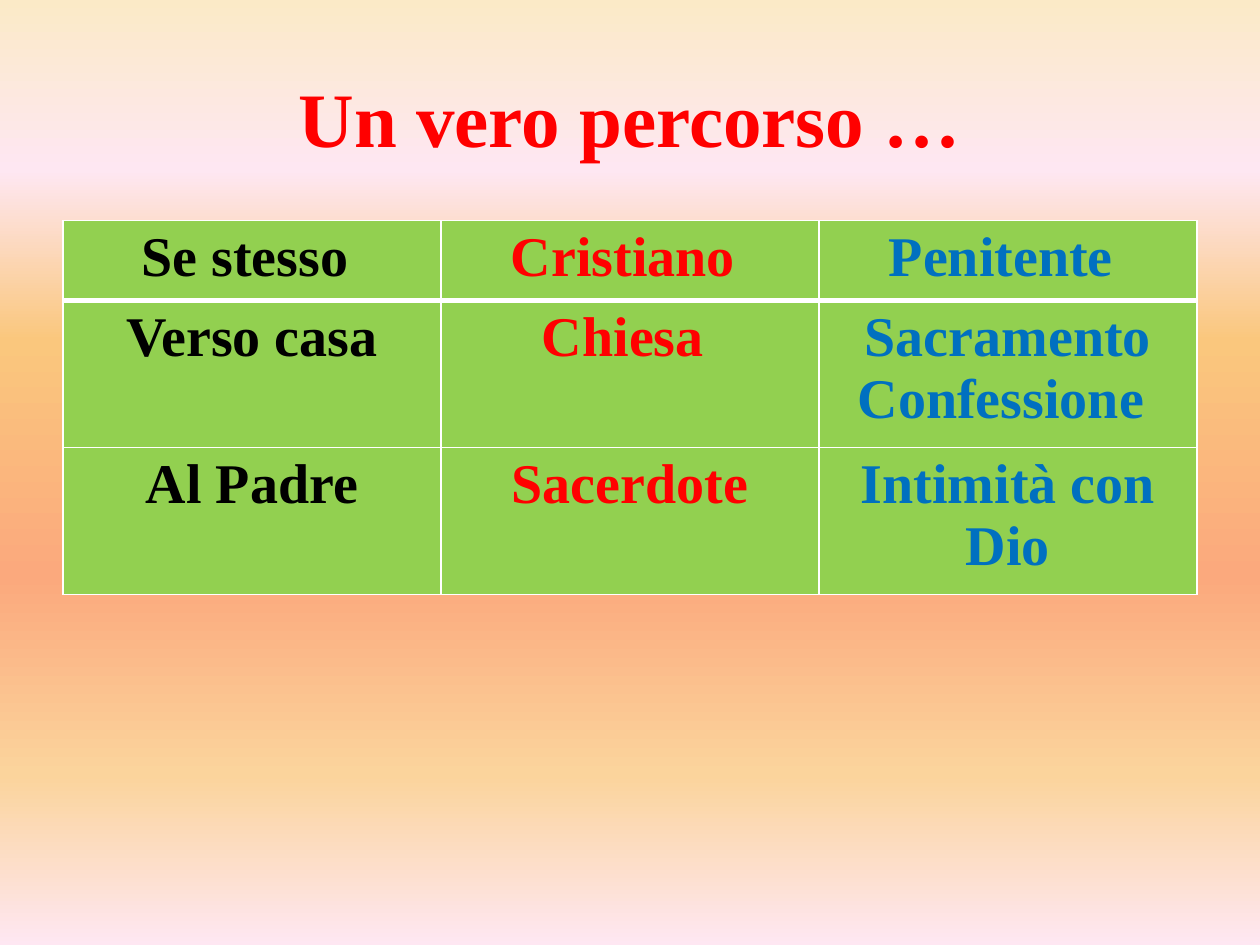
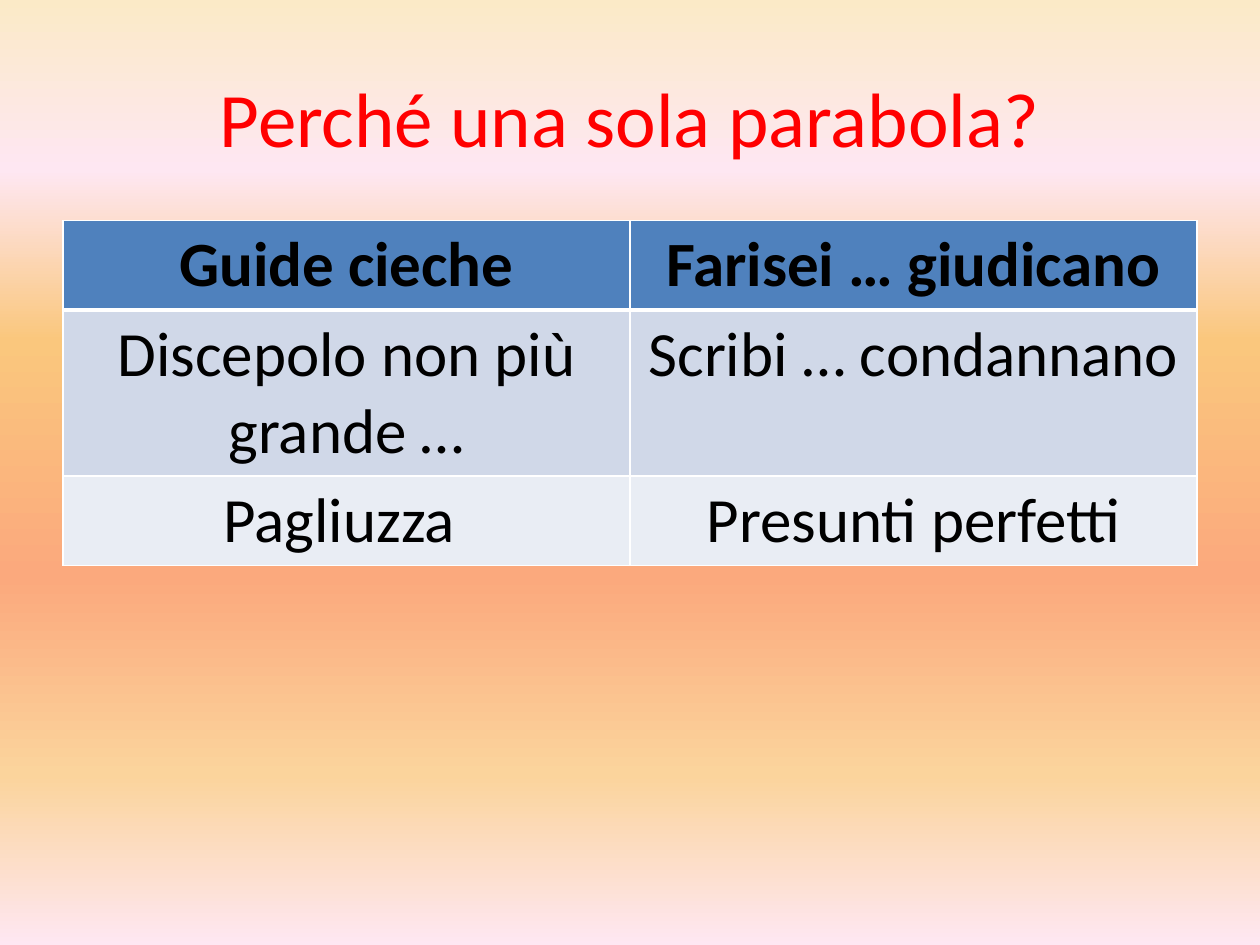
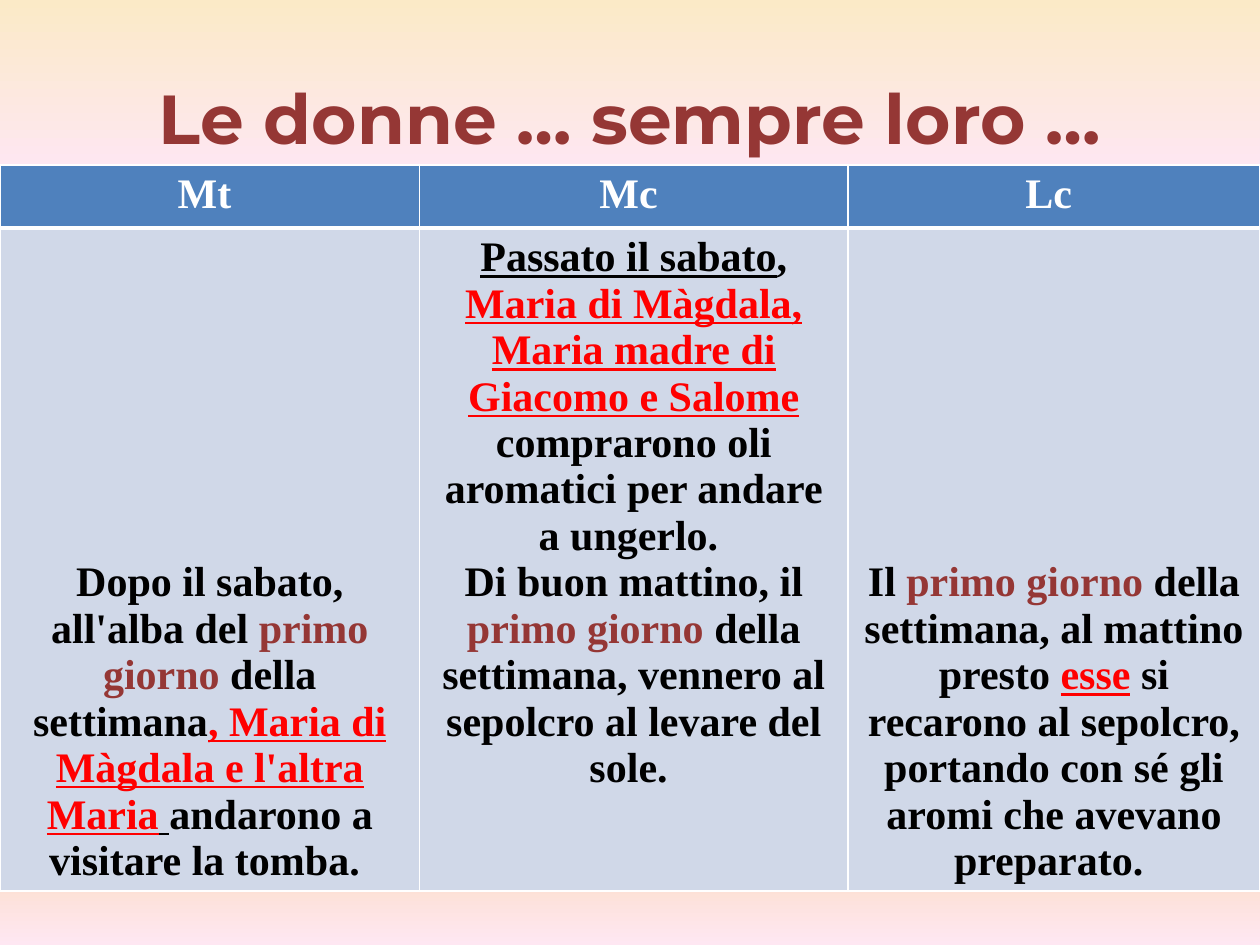
from copy import deepcopy
from lxml import etree
from pptx import Presentation
from pptx.dml import color
from pptx.enum import text
from pptx.oxml import ns
from pptx.util import Inches, Pt

WIDE, HIGH = 10, 7.5
SKY = [(0, "FBEAC7"), (18, "FEE7F2"), (36, "FAC77D"),
       (61, "FBA97D"), (82, "FBD49C"), (100, "FEE7F2")]
WHITE, BLACK, RED, WINE, BLUE = "FFFFFF", "000000", "FF0000", "953735", "0070C0"
GREEN, HEAD, BAND, PALE = "92D050", "4F81BD", "D0D8E8", "E9EDF4"
TIMES, SANS, MONT = "Times New Roman", "Calibri", "Montserrat"
TITLE = (0.05 * WIDE, 0.04 * HIGH, 0.9 * WIDE, 1.25)
BODY = (0.5, 1.75)
TOP, BOTTOM = text.MSO_ANCHOR.TOP, text.MSO_ANCHOR.BOTTOM


def rgb(code):
    return color.RGBColor.from_string(code)


def style(font, **look):
    font.color.rgb = rgb(look.pop("ink"))
    for key, value in look.items():
        setattr(font, key, value)


def write(frame, paras, **look):
    """Fill a frame; each paragraph is a list of (words, changes)."""
    for i, runs in enumerate(paras):
        para = frame.paragraphs[0] if i == 0 else frame.add_paragraph()
        para.alignment = text.PP_ALIGN.CENTER
        for words, change in runs:
            run = para.add_run()
            run.text = words
            style(run.font, **{**look, **change})


def paint(master):
    """Shared gradient from top to bottom."""
    fill = master.background.fill
    fill.gradient()
    fill.gradient_angle = 270
    stops = next(master.element.iter(ns.qn("a:gsLst")))
    for _ in SKY[2:]:
        stops.append(deepcopy(stops[0]))
    for stop, (place, code) in zip(fill.gradient_stops, SKY):
        stop.position = place / 100
        stop.color.rgb = rgb(code)


def title(slide, words, **look):
    frame = slide.shapes.add_textbox(*map(Inches, TITLE)).text_frame
    frame.word_wrap = True
    frame.vertical_anchor = text.MSO_ANCHOR.MIDDLE
    write(frame, [[(words, {})]], **look)


def edge(cell, row):
    """White cell borders, thick between header and body."""
    props = cell._tc.get_or_add_tcPr()
    sides = {"L": 1, "R": 1, "T": 3 if row == 1 else 1, "B": 3 if row == 0 else 1}
    for side, size in sides.items():
        line = etree.SubElement(props, ns.qn("a:ln" + side), w=str(Pt(size)))
        solid = etree.SubElement(line, ns.qn("a:solidFill"))
        etree.SubElement(solid, ns.qn("a:srgbClr"), val=WHITE)


def grid(slide, spot, cols, rows, fills):
    """Empty table with one fill per row."""
    box = (*spot, sum(cols), sum(rows))
    table = slide.shapes.add_table(len(rows), len(cols), *map(Inches, box)).table
    for col, size in zip(table.columns, cols):
        col.width = Inches(size)
    for r, (row, size, code) in enumerate(zip(table.rows, rows, fills)):
        row.height = Inches(size)
        for cell in row.cells:
            edge(cell, r)
            cell.fill.solid()
            cell.fill.fore_color.rgb = rgb(code)
    return table


def path_slide(slide):
    title(slide, "Un vero percorso …", name=TIMES, size=Pt(44), bold=True, ink=RED)
    table = grid(slide, BODY, [3] * 3, [0.59, 1.09, 1.09], [GREEN] * 3)
    lines = [("Se stesso ", "Cristiano ", "Penitente "),
             ("Verso casa", "Chiesa ", "Sacramento Confessione "),
             ("Al Padre", "Sacerdote", "Intimità con Dio")]
    for r, line in enumerate(lines):
        for c, (words, ink) in enumerate(zip(line, (BLACK, RED, BLUE))):
            write(table.cell(r, c).text_frame, [[(words, {})]],
                  name=TIMES, size=Pt(32), bold=True, ink=ink)


def tale_slide(slide):
    title(slide, "Perché una sola parabola?", name=SANS, size=Pt(44), bold=False, ink=RED)
    table = grid(slide, BODY, [4.5] * 2, [0.71, 1.32, 0.71], [HEAD, BAND, PALE])
    lines = [("Guide cieche", "Farisei … giudicano"),
             ("Discepolo non più grande …", "Scribi … condannano"),
             ("Pagliuzza ", "Presunti perfetti")]
    for r, line in enumerate(lines):
        for c, words in enumerate(line):
            write(table.cell(r, c).text_frame, [[(words, {})]],
                  name=SANS, size=Pt(36), bold=r == 0, ink=BLACK)


def women_slide(slide):
    title(slide, "Le donne … sempre loro …", name=MONT, size=Pt(39.6), bold=True, ink=WINE)
    table = grid(slide, (0, 1.31), [3.33, 3.4, 3.27], [0.46, 5.26], [HEAD, BAND])
    plain, day = {}, {"ink": WINE}
    under = {"underline": True}
    who = {"ink": RED, **under}
    books = [
        ("Mt ", BOTTOM, [[
            ("Dopo il sabato, all'alba del ", plain), ("primo giorno", day),
            (" della settimana", plain), (", Maria di Màgdala e l'altra Maria", who),
            (" ", under), ("andarono a visitare la tomba. ", plain)]]),
        ("Mc ", TOP, [
            [("Passato il sabato", under), (", ", plain),
             ("Maria di Màgdala, Maria madre di Giacomo e Salome ", who),
             ("comprarono oli aromatici per andare a ungerlo. ", plain)],
            [("Di buon mattino, il ", plain), ("primo giorno ", day),
             ("della settimana, vennero al sepolcro al levare del sole. ", plain)]]),
        ("Lc ", BOTTOM, [[
            ("Il ", plain), ("primo giorno ", day),
            ("della settimana, al mattino presto ", plain), ("esse", who),
            (" si recarono al sepolcro, portando con sé gli aromi "
             "che avevano preparato. ", plain)]]),
    ]
    look = {"name": TIMES, "size": Pt(24), "bold": True}
    for c, (book, anchor, paras) in enumerate(books):
        write(table.cell(0, c).text_frame, [[(book, {})]], ink=WHITE, **look)
        cell = table.cell(1, c)
        cell.vertical_anchor = anchor
        write(cell.text_frame, paras, ink=BLACK, **look)


def main():
    deck = Presentation()
    deck.slide_width, deck.slide_height = Inches(WIDE), Inches(HIGH)
    paint(deck.slide_master)
    for build in (path_slide, tale_slide, women_slide):
        build(deck.slides.add_slide(deck.slide_layouts[6]))
    deck.save("out.pptx")


if __name__ == "__main__":
    main()
